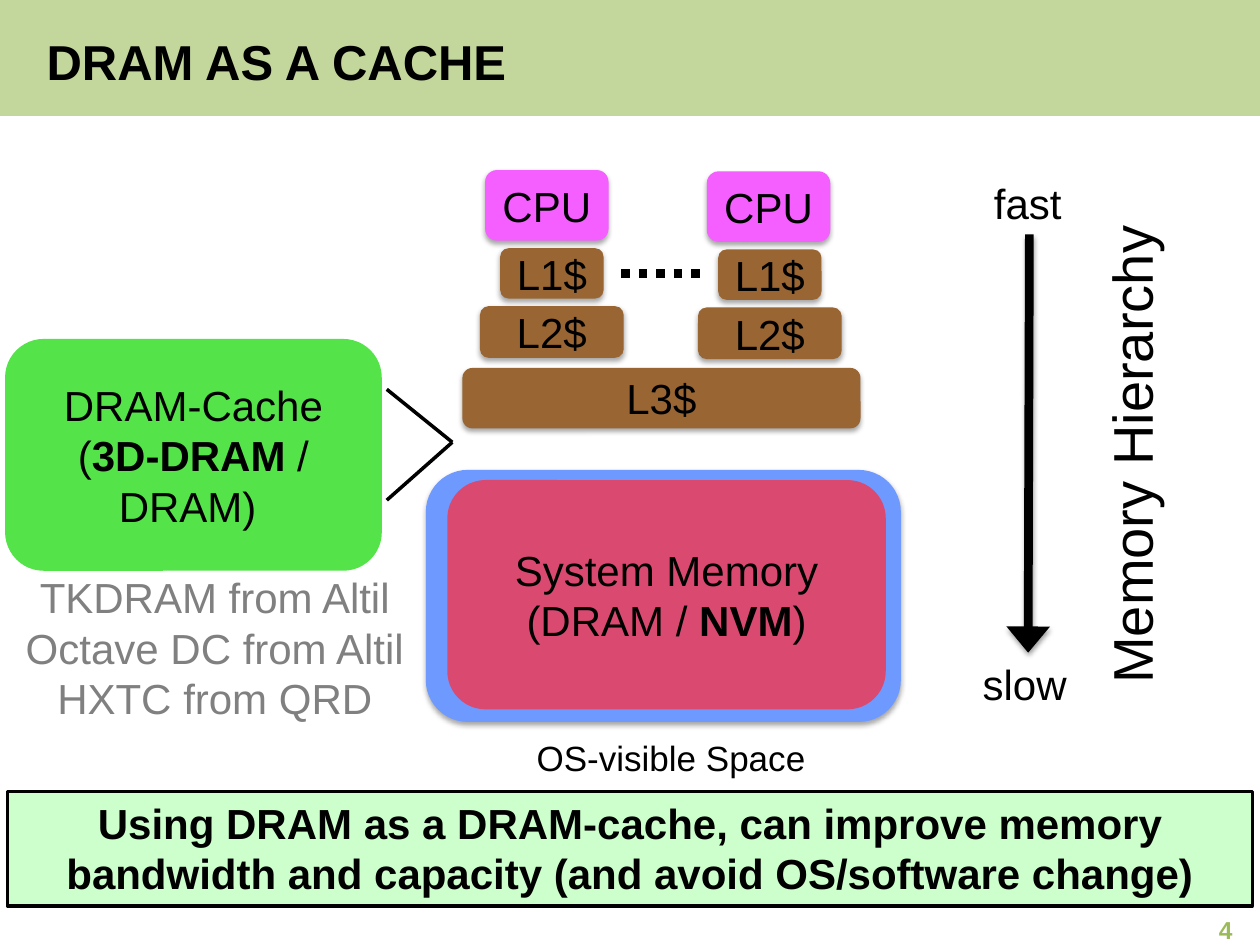
from dataclasses import dataclass

from lxml import etree
from pptx import Presentation
from pptx.dml.color import RGBColor
from pptx.enum.dml import MSO_LINE
from pptx.enum.shapes import MSO_CONNECTOR, MSO_SHAPE
from pptx.enum.text import MSO_ANCHOR, PP_ALIGN
from pptx.oxml.ns import qn
from pptx.util import Inches, Pt

RECT, ROUNDED = MSO_SHAPE.RECTANGLE, MSO_SHAPE.ROUNDED_RECTANGLE
STRAIGHT = MSO_CONNECTOR.STRAIGHT
DOTTED = MSO_LINE.ROUND_DOT  # written as sysDot
LEFT, CENTER, RIGHT = PP_ALIGN.LEFT, PP_ALIGN.CENTER, PP_ALIGN.RIGHT
TOP, MIDDLE = MSO_ANCHOR.TOP, MSO_ANCHOR.MIDDLE


@dataclass(frozen=True)
class Theme:
    font: str = "Arial"
    ink: str = "000000"
    muted: str = "808080"
    band: str = "C3D69B"
    page: str = "9BBB59"
    cpu: str = "F55FFF"
    cache: str = "996633"
    dram_cache: str = "54E44A"
    os_space: str = "6E9AFF"
    memory: str = "FF3041"
    takeaway: str = "CCFFCC"
    title_size: int = 28
    axis_size: int = 32
    body_size: int = 24
    caption_size: int = 20
    page_size: int = 14
    thin: int = 2
    thick: int = 5


THEME = Theme()


def rgb(value):
    return RGBColor.from_string(value)


def add_xml(parent, tag, **attributes):
    names = {name: str(value) for name, value in attributes.items()}
    return etree.SubElement(parent, qn(tag), names)


def set_shadow(shape, alpha=None, distance=1.8):
    """Give the shape a soft drop shadow, or none when alpha is missing."""
    effects = add_xml(shape._element.spPr, "a:effectLst")
    if alpha:
        outer = add_xml(effects, "a:outerShdw", blurRad=Pt(3.1), dist=Pt(distance),
                        dir=5400000, rotWithShape=0)
        color = add_xml(outer, "a:srgbClr", val=THEME.ink)
        add_xml(color, "a:alpha", val=alpha * 1000)


def write(shape, lines, size=THEME.body_size, color=THEME.ink, bold=False,
          align=CENTER, anchor=MIDDLE, wrap=True):
    """Write lines of text; in a line, parts between asterisks are bold."""
    frame = shape.text_frame
    frame_format = {
        "word_wrap": wrap, "vertical_anchor": anchor,
        "margin_left": Inches(0.1), "margin_right": Inches(0.1),
        "margin_top": Inches(0.05), "margin_bottom": Inches(0.05),
    }
    for name, value in frame_format.items():
        setattr(frame, name, value)
    for index, line in enumerate(lines):
        paragraph = frame.paragraphs[0] if index == 0 else frame.add_paragraph()
        paragraph.alignment = align
        for part, words in enumerate(line.split("*")):
            run = paragraph.add_run()
            run.text = words
            font_format = {"name": THEME.font, "size": Pt(size),
                           "bold": bold or part % 2 == 1}
            for name, value in font_format.items():
                setattr(run.font, name, value)
            run.font.color.rgb = rgb(color)


def add_label(slide, box, lines, **text_format):
    label = slide.shapes.add_textbox(*map(Inches, box))
    write(label, lines, **{"anchor": TOP, **text_format})
    return label


def add_block(slide, box, fill, lines=(), kind=ROUNDED, shadow=False, **text_format):
    block = slide.shapes.add_shape(kind, *map(Inches, box))
    block.fill.solid()
    block.fill.fore_color.rgb = rgb(fill)
    block.line.fill.background()
    set_shadow(block, 35 if shadow else None)
    write(block, lines, **text_format)
    return block


def add_line(slide, start, end, width):
    line = slide.shapes.add_connector(STRAIGHT, *map(Inches, start + end))
    line.line.color.rgb = rgb(THEME.ink)
    line.line.width = Pt(width)
    return line


def add_header(slide, left, top, width, height):
    band = add_block(slide, (left, top, width, height), THEME.band, kind=RECT)
    title = slide.shapes.title
    title.left, title.top = Inches(left + 0.27), Inches(top + 0.22)
    title.width, title.height = Inches(9.17), Inches(0.53)
    write(title, ["DRAM AS A CACHE"], size=THEME.title_size, bold=True, align=LEFT)
    title._element.addprevious(band._element)  # the band lies behind the title


def add_core(slide, center, top, cache_shift):
    """One CPU above its private L1 and L2 caches."""
    cache_center = center + cache_shift
    parts = (
        ("CPU", THEME.cpu, center, 0, 0.98, 0.56),
        ("L1$", THEME.cache, cache_center, 0.62, 0.82, 0.4),
        ("L2$", THEME.cache, cache_center, 1.08, 1.14, 0.41),
    )
    for name, fill, middle, drop, width, height in parts:
        add_block(slide, (middle - width / 2, top + drop, width, height),
                  fill, [name], shadow=True)


def add_processor(slide, left, top, width):
    add_core(slide, left + 0.67, top, 0.04)
    add_core(slide, left + 2.43, top + 0.01, 0.01)
    dots = add_line(slide, (left + 1.26, top + 0.82), (left + 1.91, top + 0.82),
                    THEME.thick)
    dots.line.dash_style = DOTTED
    set_shadow(dots)
    add_block(slide, (left, top + 1.57, width, 0.48), THEME.cache, ["L3$"], shadow=True)


def add_system_memory(slide, left, top, width, height):
    add_block(slide, (left, top, width, height), THEME.os_space, shadow=True)
    memory = add_block(slide, (left + 0.17, top + 0.08, width - 0.29, height - 0.18),
                       THEME.memory, ["System Memory", "(DRAM / *NVM*)"])
    color = memory._element.spPr.find(qn("a:solidFill"))[0]
    add_xml(color, "a:alpha", val=75000)
    add_label(slide, (left + 0.78, top + height + 0.07, 2.35, 0.44),
              ["OS-visible Space"], size=THEME.caption_size, align=LEFT, wrap=False)


def add_dram_cache(slide, left, top, width, height):
    add_block(slide, (left, top, width, height), THEME.dram_cache,
              ["DRAM-Cache", "(*3D-DRAM* / DRAM) "])
    # Two lines meet where the cache sits in the hierarchy
    tip = (left + width + 0.56, top + 0.82)
    for drop in (0.4, 1.28):
        set_shadow(add_line(slide, (left + width + 0.04, top + drop), tip, THEME.thin))
    add_label(slide, (left - 0.02, top + height - 0.04, 3.37, 1.31),
              ["TKDRAM from Altil", "Octave DC from Altil", "HXTC from QRD"],
              color=THEME.muted)


def add_speed_axis(slide, left, top, height):
    add_label(slide, (left + 0.09, top, 0.77, 0.5), ["fast"], align=LEFT)
    add_label(slide, (left, top + height - 0.5, 0.92, 0.5), ["slow"], align=LEFT)
    arrow = add_line(slide, (left + 0.47, top + 0.5),
                     (left + 0.46, top + height - 0.5), THEME.thick)
    add_xml(arrow.line._get_or_add_ln(), "a:tailEnd", type="triangle", w="lg")
    set_shadow(arrow, 38, 1.6)
    axis_title = add_label(slide, (left - 0.83, top + 1.93, 4.21, 0.64),
                           ["Memory Hierarchy"], size=THEME.axis_size)
    axis_title.rotation = 270


def add_takeaway(slide, left, top, width, height):
    message = ("Using DRAM as a DRAM-cache, can improve memory "
               "bandwidth and capacity (and avoid OS/software change)")
    banner = add_block(slide, (left, top, width, height), THEME.takeaway, [message],
                       kind=RECT, bold=True, anchor=TOP)
    banner.line.color.rgb = rgb(THEME.ink)
    banner.line.width = Pt(THEME.thin)


def main():
    deck = Presentation()
    deck.slide_width, deck.slide_height = Inches(10), Inches(7.5)
    slide = deck.slides.add_slide(deck.slide_layouts[5])

    add_header(slide, 0, 0, 10, 0.92)
    add_system_memory(slide, 3.38, 3.73, 3.77, 2)
    add_processor(slide, 3.67, 1.35, 3.16)
    add_dram_cache(slide, 0.04, 2.69, 2.99, 1.84)
    add_speed_axis(slide, 7.7, 1.36, 4.32)
    add_takeaway(slide, 0.06, 6.28, 9.88, 0.91)
    # Page number
    add_label(slide, (7.55, 7.25, 2.33, 0.26), ["4"], size=THEME.page_size,
              color=THEME.page, bold=True, align=RIGHT, anchor=MIDDLE)
    deck.save("out.pptx")


if __name__ == "__main__":
    main()
